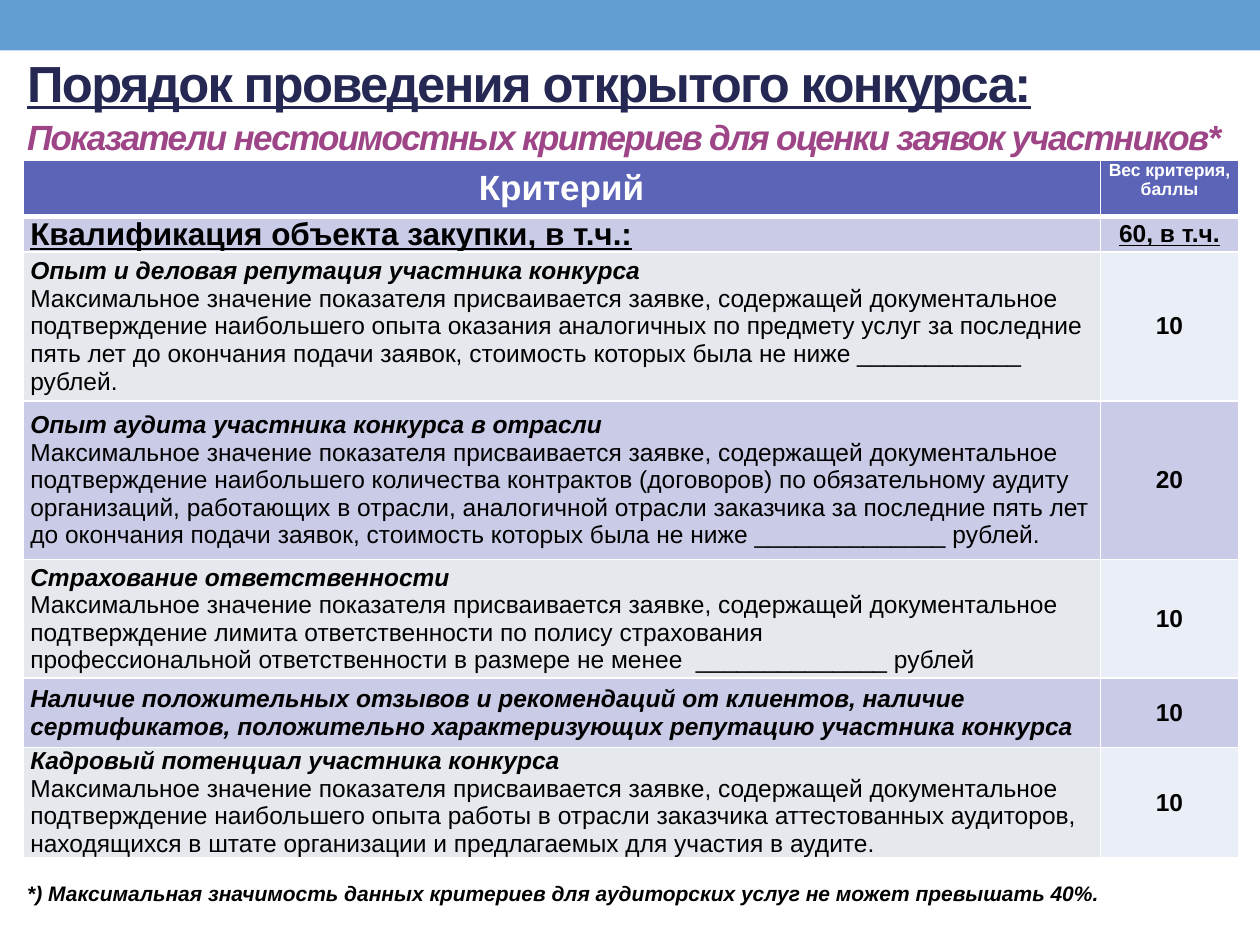
from collections import namedtuple
from dataclasses import dataclass

from lxml.etree import SubElement
from pptx import Presentation
from pptx.dml.color import RGBColor
from pptx.enum.shapes import MSO_SHAPE
from pptx.enum.text import MSO_ANCHOR, MSO_AUTO_SIZE, PP_ALIGN
from pptx.oxml.ns import qn
from pptx.util import Cm, Pt

Box = namedtuple("Box", "left top width height")


@dataclass(frozen=True)
class Theme:
    font: str = "Arial"
    bar: str = "629DD1"
    title: str = "242852"
    sub: str = "9D4586"
    head: str = "5C64B7"
    band: str = "C9CBE7"
    pale: str = "E5E9EE"
    score: str = "EAEFF7"
    white: str = "FFFFFF"
    black: str = "000000"
    big: int = 29
    mid: int = 20
    group: int = 18
    body: int = 14
    note: int = 12
    tiny: int = 10


THEME = Theme()

COLS = [21.72, 2.79]
ROWS = [1.14, 0.38, 3, 3.2, 2.39, 1.4, 1.5]
HEAD = ["Критерий", "Вес критерия, баллы"]
GROUP = ["Квалификация объекта закупки, в т.ч.:", "60, в т.ч."]
LEAD = ("Максимальное значение показателя присваивается заявке, "
        "содержащей документальное подтверждение ")
ITEMS = [
    (["Опыт и деловая репутация участника конкурса",
      LEAD + "наибольшего опыта оказания аналогичных по предмету услуг за "
      "последние пять лет до окончания подачи заявок, стоимость которых была "
      "не ниже ____________ рублей."], "10"),
    (["Опыт аудита участника конкурса в отрасли",
      LEAD + "наибольшего количества контрактов (договоров) по обязательному "
      "аудиту организаций, работающих в отрасли, аналогичной отрасли заказчика "
      "за последние пять лет до окончания подачи заявок, стоимость которых "
      "была не ниже ______________ рублей."], "20"),
    (["Страхование ответственности",
      LEAD + "лимита ответственности по полису страхования",
      "профессиональной ответственности в размере не менее  "
      "______________ рублей"], "10"),
    (["Наличие положительных отзывов и рекомендаций от клиентов, наличие "
      "сертификатов, положительно характеризующих репутацию участника "
      "конкурса"], "10"),
    (["Кадровый потенциал участника конкурса",
      LEAD + "наибольшего опыта работы в отрасли заказчика аттестованных "
      "аудиторов, находящихся в штате организации и предлагаемых для участия "
      "в аудите."], "10"),
]


def apply(target, values):
    for name, value in values.items():
        setattr(target, name, value)


def write(para, text, size, color=THEME.black, **style):
    run = para.add_run()
    run.text = text
    apply(run.font, {"name": THEME.font, "size": Pt(size), "bold": True, **style})
    run.font.color.rgb = RGBColor.from_string(color)
    return run


def edge(cell, side, width):
    props = cell._tc.get_or_add_tcPr()
    line = SubElement(props, qn("a:ln" + side), w=str(Pt(width)))
    fill = SubElement(line, qn("a:solidFill"))
    SubElement(fill, qn("a:srgbClr"), val=THEME.white)


def dress(cell, fill, anchor=MSO_ANCHOR.MIDDLE, top=1, bottom=1):
    """Set the insets, borders and fill of a cell."""
    apply(cell, {"margin_left": Cm(0.15), "margin_right": Cm(0.15),
                 "margin_top": 0, "margin_bottom": 0,
                 "vertical_anchor": anchor})
    for side, width in {"L": 1, "R": 1, "T": top, "B": bottom}.items():
        edge(cell, side, width)
    cell.fill.solid()
    cell.fill.fore_color.rgb = RGBColor.from_string(fill)


def first(cell, align=PP_ALIGN.CENTER):
    para = cell.text_frame.paragraphs[0]
    para.alignment = align
    return para


def add_bar(slide, box):
    bar = slide.shapes.add_shape(MSO_SHAPE.RECTANGLE, *map(Cm, box))
    bar.shadow.inherit = False
    bar.fill.solid()
    bar.fill.fore_color.rgb = RGBColor.from_string(THEME.bar)
    bar.line.fill.background()


def add_line(slide, box, text, size, color, track=0, **style):
    """Place one line of text; track is letter spacing in points."""
    frame = slide.shapes.add_textbox(*map(Cm, box)).text_frame
    apply(frame, {"word_wrap": True, "auto_size": MSO_AUTO_SIZE.SHAPE_TO_FIT_TEXT})
    run = write(frame.paragraphs[0], text, size, color, **style)
    if track:
        run.font._element.set("spc", str(track * 100))


def add_heading(slide, box):
    add_line(slide, Box(box.left, box.top, 24.41, 1.5),
             "Порядок проведения открытого конкурса:",
             THEME.big, THEME.title, track=-1, underline=True)
    add_line(slide, Box(box.left, box.top + 1.3, box.width, 1.12),
             "Показатели нестоимостных критериев для оценки заявок участников*",
             THEME.mid, THEME.sub, track=-1, italic=True)


def add_grid(slide, box):
    shape = slide.shapes.add_table(len(ROWS), len(COLS), *map(Cm, box))
    table = shape.table
    for col, width in zip(table.columns, COLS):
        col.width = Cm(width)
    for row, height in zip(table.rows, ROWS):
        row.height = Cm(height)
    shape.height = Cm(box.height)

    looks = [(THEME.mid, MSO_ANCHOR.MIDDLE), (THEME.tiny, MSO_ANCHOR.TOP)]
    for cell, text, (size, anchor) in zip(table.rows[0].cells, HEAD, looks):
        dress(cell, THEME.head, anchor, bottom=3)
        write(first(cell), text, size, THEME.white)

    looks = [(THEME.group, MSO_ANCHOR.TOP, PP_ALIGN.LEFT),
             (THEME.body, MSO_ANCHOR.MIDDLE, PP_ALIGN.CENTER)]
    for cell, text, (size, anchor, align) in zip(table.rows[1].cells, GROUP, looks):
        dress(cell, THEME.band, anchor, top=3)
        write(first(cell, align), text, size, underline=True)

    for index, (texts, score) in enumerate(ITEMS):
        left, right = table.rows[index + 2].cells
        odd = index % 2
        dress(left, THEME.band if odd else THEME.pale)
        dress(right, THEME.band if odd else THEME.score)
        write(first(left, PP_ALIGN.LEFT), texts[0], THEME.body, italic=True)
        for text in texts[1:]:
            write(left.text_frame.add_paragraph(), text, THEME.body, bold=False)
        write(first(right), score, THEME.body)


def main():
    deck = Presentation()
    apply(deck, {"slide_width": Cm(25.4), "slide_height": Cm(19.05)})
    slide = deck.slides.add_slide(deck.slide_layouts[6])
    add_bar(slide, Box(0, 0, 25.4, 1.02))
    add_grid(slide, Box(0.46, 3.23, sum(COLS), 14.3))
    add_line(slide, Box(0.3, 17.63, 24.61, 0.76),
             "*) Максимальная значимость данных критериев для аудиторских "
             "услуг не может превышать 40%.",
             THEME.note, THEME.black, italic=True)
    add_heading(slide, Box(0.3, 0.91, 24.79, 2.42))
    deck.save("out.pptx")


if __name__ == "__main__":
    main()
